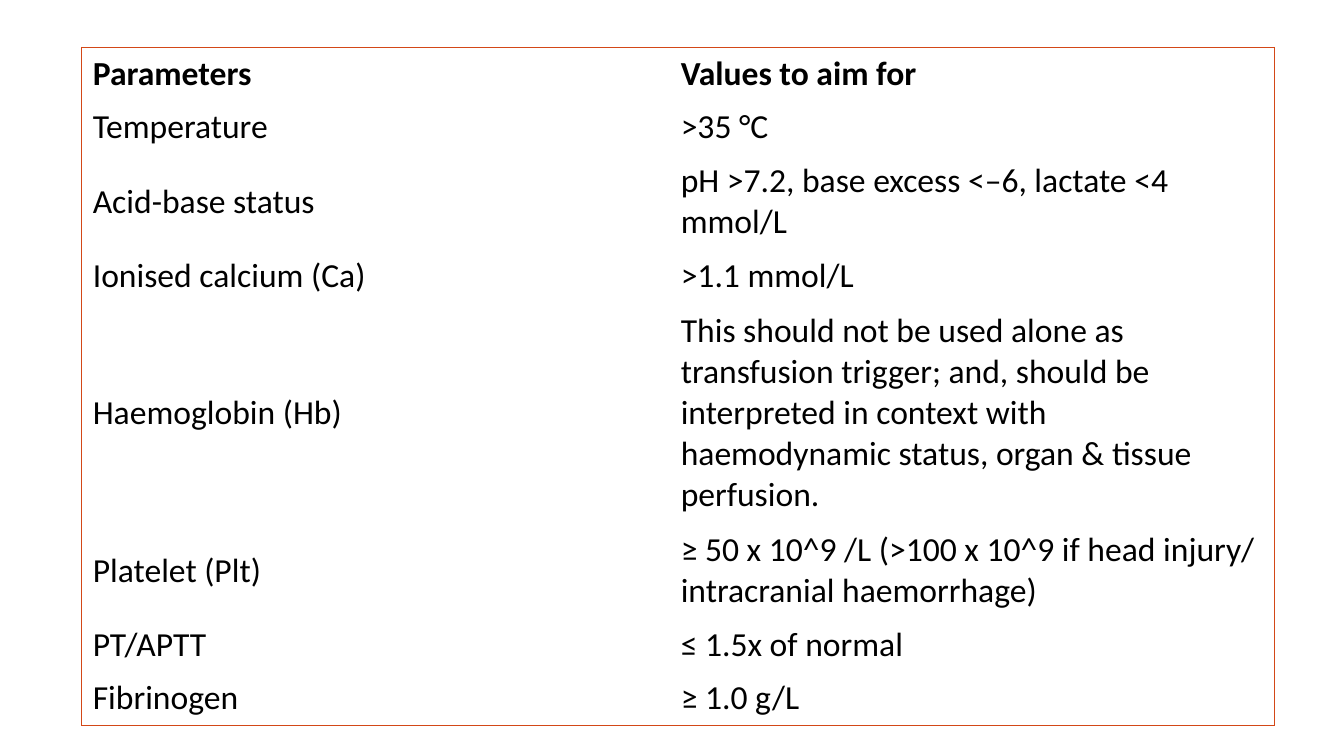
from typing import NamedTuple

from lxml import etree
from pptx import Presentation
from pptx.dml.color import RGBColor
from pptx.enum.text import MSO_ANCHOR
from pptx.oxml.ns import qn
from pptx.util import Pt

MIDDLE = MSO_ANCHOR.MIDDLE
FONT, TEXT, BORDER = "Calibri", "000000", "D34817"
BORDER_WIDTH = Pt(0.5)
LEFT, TOP = 58.3, 33.8
COL_WIDTHS = (420, 432)
CELL_FORMAT = {
    "vertical_anchor": MIDDLE,
    "margin_left": Pt(8),
    "margin_right": Pt(8),
    "margin_top": Pt(4.2),
    "margin_bottom": Pt(4.2),
}


class Target(NamedTuple):
    parameter: str
    value: str
    height: float = 38.2


TARGETS = [
    Target("Parameters", "Values to aim for"),
    Target("Temperature", ">35 °C"),
    Target("Acid-base status", "pH >7.2, base excess <–6, lactate <4 mmol/L", 67.7),
    Target("Ionised calcium (Ca)", ">1.1 mmol/L"),
    Target("Haemoglobin (Hb)",
           "This should not be used alone as transfusion trigger; and, should be "
           "interpreted in context with haemodynamic status, organ & tissue perfusion.",
           157.7),
    Target("Platelet (Plt)",
           "≥ 50 x 10^9 /L (>100 x 10^9 if head injury/ intracranial haemorrhage)", 67.7),
    Target("PT/APTT", "≤ 1.5x of normal"),
    Target("Fibrinogen", "≥ 1.0 g/L"),
]


def rgb(value: str) -> RGBColor:
    return RGBColor.from_string(value)


def set_borders(cell, sides: dict[str, bool]) -> None:
    """Draw the sides marked True and clear the others; call before filling."""
    tc_pr = cell._tc.get_or_add_tcPr()
    for side, visible in sides.items():
        ln = etree.SubElement(tc_pr, qn(f"a:ln{side}"), w=str(BORDER_WIDTH))
        if visible:
            fill = etree.SubElement(ln, qn("a:solidFill"))
            etree.SubElement(fill, qn("a:srgbClr"), val=BORDER)
        else:
            etree.SubElement(ln, qn("a:noFill"))


def write_cell(cell, text: str, bold: bool) -> None:
    for name, value in CELL_FORMAT.items():
        setattr(cell, name, value)
    cell.fill.background()
    r = cell.text_frame.paragraphs[0].add_run()
    r.text = text
    for name, value in {"name": FONT, "size": Pt(24), "bold": bold}.items():
        setattr(r.font, name, value)
    r.font.color.rgb = rgb(TEXT)


def add_targets_table(s) -> None:
    height = sum(target.height for target in TARGETS)
    table = s.shapes.add_table(len(TARGETS), len(COL_WIDTHS), Pt(LEFT), Pt(TOP),
                               Pt(sum(COL_WIDTHS)), Pt(height)).table
    table.first_row = table.horz_banding = False
    for column, width in zip(table.columns, COL_WIDTHS):
        column.width = Pt(width)
    last_row, last_col = len(TARGETS) - 1, len(COL_WIDTHS) - 1
    for row, target in enumerate(TARGETS):
        table.rows[row].height = Pt(target.height)
        for col, text in enumerate((target.parameter, target.value)):
            cell = table.cell(row, col)
            set_borders(cell, {"L": col == 0, "R": col == last_col,
                               "T": row == 0, "B": row == last_row})
            write_cell(cell, text, bold=row == 0)


def main() -> None:
    prs = Presentation()
    prs.slide_width, prs.slide_height = Pt(960), Pt(540)
    s = prs.slides.add_slide(prs.slide_layouts[6])
    add_targets_table(s)
    prs.save("out.pptx")


if __name__ == "__main__":
    main()
